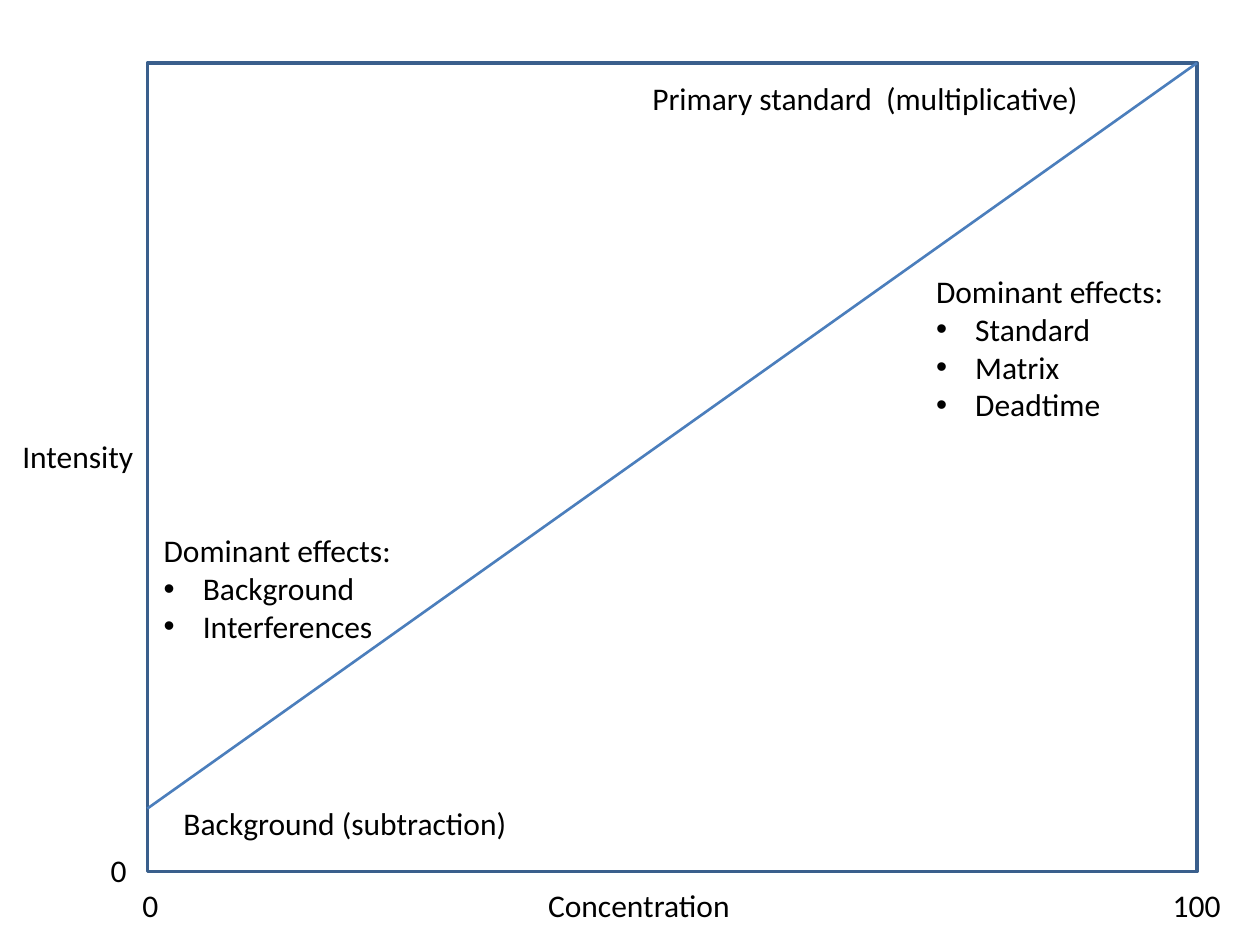
"""Build a calibration line slide of intensity against concentration."""
from lxml.etree import SubElement
from pptx import Presentation
from pptx.dml.color import RGBColor
from pptx.enum.shapes import MSO_CONNECTOR, MSO_SHAPE
from pptx.enum.text import MSO_AUTO_SIZE
from pptx.oxml.ns import qn
from pptx.util import Cm, Pt

BLACK = RGBColor(0x00, 0x00, 0x00)
NAVY = RGBColor(0x3A, 0x5F, 0x8C)
BLUE = RGBColor(0x4B, 0x7E, 0xBC)
FONT = "Calibri"

LEFT, TOP, RIGHT, BASE = 2.97, 1.27, 24.13, 17.57
START = 16.3
ROW, PAD = 0.76, 0.25
AXIS = 17.73

LABELS = [
    (0.2, 8.69, 2.77, ["Intensity"]),
    (10.8, AXIS, 4.22, ["Concentration"]),
    (3.45, 16.08, 7.09, ["Background (subtraction)"]),
    (12.9, 1.47, 9.19, ["Primary standard  (multiplicative)"]),
    (18.62, 5.36, 5.16, ["Dominant effects:", "Standard", "Matrix ", "Deadtime"]),
    (3.05, 10.59, 5.16, ["Dominant effects:", "Background", "Interferences"]),
    (2.62, AXIS, 0.84, ["0"]),
    (23.39, AXIS, 1.5, ["100"]),
    (1.98, 17.04, 0.84, ["0"]),
]


def add_bullet(para):
    props = para._p.get_or_add_pPr()
    props.set("marL", str(Cm(0.79)))
    props.set("indent", str(-Cm(0.79)))
    SubElement(props, qn("a:buFont")).set("typeface", "Arial")
    SubElement(props, qn("a:buChar")).set("char", "•")


def add_label(slide, x, y, width, lines):
    height = len(lines) * ROW + PAD
    box = slide.shapes.add_textbox(Cm(x), Cm(y), Cm(width), Cm(height))
    frame = box.text_frame
    frame.word_wrap = False
    frame.auto_size = MSO_AUTO_SIZE.SHAPE_TO_FIT_TEXT
    frame.text = "\n".join(lines)
    for idx, para in enumerate(frame.paragraphs):
        if idx:
            add_bullet(para)
        for run in para.runs:
            run.font.name = FONT
            run.font.size = Pt(18)
            run.font.color.rgb = BLACK


deck = Presentation()
deck.slide_width, deck.slide_height = Cm(25.4), Cm(19.05)
slide = deck.slides.add_slide(deck.slide_layouts[6])

plot = slide.shapes.add_shape(
    MSO_SHAPE.RECTANGLE, Cm(LEFT), Cm(TOP), Cm(RIGHT - LEFT), Cm(BASE - TOP))
plot.shadow.inherit = False
plot.fill.background()
plot.line.color.rgb = NAVY
plot.line.width = Pt(2)

trend = slide.shapes.add_connector(
    MSO_CONNECTOR.STRAIGHT, Cm(LEFT), Cm(START), Cm(RIGHT), Cm(TOP))
trend.line.color.rgb = BLUE
trend.line.width = Pt(1.5)
SubElement(trend._element.spPr, qn("a:effectLst"))

for label in LABELS:
    add_label(slide, *label)

deck.save("out.pptx")
